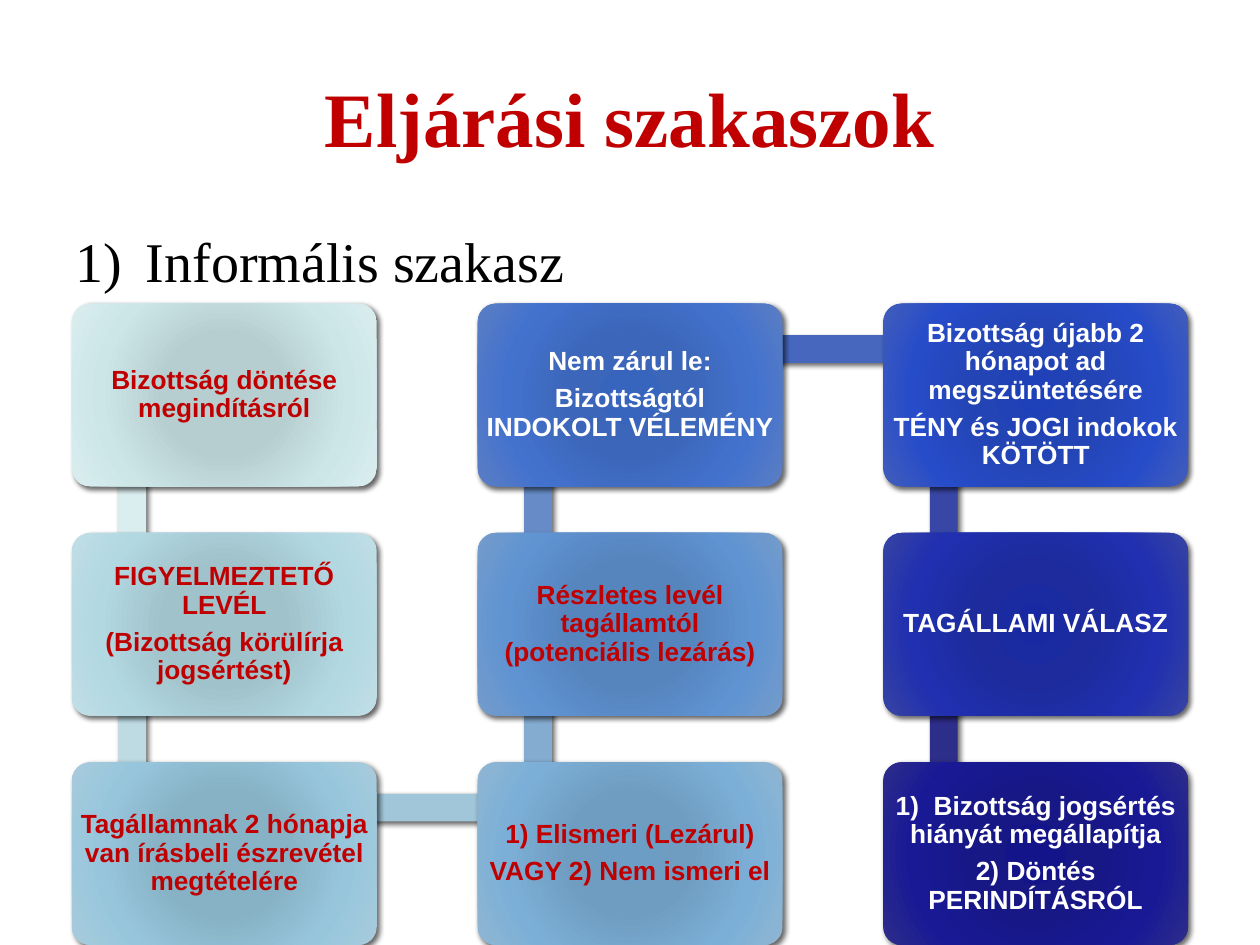
"""Build the slide on the procedural stages, with a snaking chain of nine boxes."""
from lxml import etree
from pptx import Presentation
from pptx import util as u
from pptx.dml.color import RGBColor
from pptx.enum import shapes, text
from pptx.oxml import parse_xml
from pptx.oxml.ns import nsdecls, qn

COLORS = {"red": "C00000", "white": "FFFFFF", "black": "000000"}
BOX_WIDTH, BOX_HEIGHT = 2.42, 1.45
LEFT, TOP, COLUMN_STEP, ROW_STEP = 0.57, 2.41, 3.22, 1.82
BAR = 0.22
STOPS = (0, 34, 70, 100)

STAGES = [
    (0, 0, "red", ["Bizottság döntése megindításról"],
     "B6CFD1 B7CED0 CCE6E8 DAEDEF", "DAEDEF"),
    (0, 1, "red", ["FIGYELMEZTETŐ LEVÉL", "(Bizottság körülírja jogsértést)"],
     "9EC2CC A0C2CA B2D8E2 C1DEE5", "BEDBE4"),
    (0, 2, "red", ["Tagállamnak 2 hónapja van írásbeli észrevétel megtételére"],
     "85B2C7 87B1C5 97C6DC A8CBDC", "A1C6D9"),
    (1, 2, "red", ["1) Elismeri (Lezárul)", "VAGY 2) Nem ismeri el"],
     "6C9DC4 6F9DC1 7CAFD7 8FB6D3", "84ABD0"),
    (1, 1, "red", ["Részletes levél tagállamtól (potenciális lezárás)"],
     "5284C0 5684BD 5F93D2 759CCB", "668BC6"),
    (1, 0, "white", ["Nem zárul le:", "Bizottságtól INDOKOLT VÉLEMÉNY"],
     "3765BD 3C66B9 4372CE 5B7EC3", "4766BE"),
    (2, 0, "white", ["Bizottság újabb 2 hónapot ad megszüntetésére",
                     "TÉNY és JOGI indokok KÖTÖTT"],
     "1E41B9 2344B4 274CC9 415DBA", "3847A6"),
    (2, 1, "white", ["TAGÁLLAMI VÁLASZ"],
     "1828A2 1D2B9D 2030B0 3743A2", "2D2D8A"),
    (2, 2, "white", ["1)  Bizottság jogsértés hiányát megállapítja",
                     "2) Döntés PERINDÍTÁSRÓL"],
     "13138A 171786 191996 2D2D8A", None),
]


def set_font(para, name, size, color, bold=False):
    """Format the whole paragraph."""
    para.font.name = name
    para.font.size = u.Pt(size)
    para.font.bold = bold
    para.font.color.rgb = RGBColor.from_string(COLORS[color])


def add_block(kind, left, top, width, height):
    """Add a shape without outline and with a soft drop shadow."""
    block = page.shapes.add_shape(kind, *map(u.Inches, (left, top, width, height)))
    block.line.fill.background()
    block.shadow.inherit = False
    block._element.spPr.find(qn("a:effectLst")).append(parse_xml(
        f'<a:outerShdw {nsdecls("a")} blurRad="38100" dist="25400" dir="2700000" '
        'rotWithShape="0"><a:srgbClr val="000000"><a:alpha val="60000"/>'
        '</a:srgbClr></a:outerShdw>'))
    return block


deck = Presentation()
deck.slide_width, deck.slide_height = u.Inches(10), u.Inches(7.5)
page = deck.slides.add_slide(deck.slide_layouts[5])

title = page.shapes.title
title.left, title.top = u.Inches(0.5), u.Inches(0.3)
title.width, title.height = u.Inches(9), u.Inches(1.25)
title.text_frame.text = "Eljárási szakaszok"
title.text_frame.vertical_anchor = text.MSO_ANCHOR.MIDDLE
para = title.text_frame.paragraphs[0]
para.alignment = text.PP_ALIGN.CENTER
set_font(para, "Times New Roman", 44, "red", True)

heading = page.shapes.add_textbox(*map(u.Inches, (0.5, 1.75, 9, 0.65)))
heading.text_frame.word_wrap = True
para = heading.text_frame.paragraphs[0]
para.text = "Informális szakasz"
properties = para._p.get_or_add_pPr()
properties.set("marL", str(u.Inches(0.56)))
properties.set("indent", str(-u.Inches(0.56)))
etree.SubElement(properties, qn("a:buFont"), typeface="+mj-lt")
etree.SubElement(properties, qn("a:buAutoNum"), type="arabicParenR")
set_font(para, "Times New Roman", 32, "black")

for index, (column, row, font_color, lines, gradient, bar_color) in enumerate(STAGES):
    left = LEFT + column * COLUMN_STEP
    top = TOP + row * ROW_STEP
    if bar_color:
        next_column, next_row = STAGES[index + 1][:2]
        if next_column == column:
            upper = TOP + min(row, next_row) * ROW_STEP
            place = (left + 0.37, upper + 0.37, BAR, ROW_STEP)
        else:
            place = (left + 0.49, top + 0.25, COLUMN_STEP, BAR)
        bar = add_block(shapes.MSO_SHAPE.RECTANGLE, *place)
        bar.fill.solid()
        bar.fill.fore_color.rgb = RGBColor.from_string(bar_color)

    box = add_block(shapes.MSO_SHAPE.ROUNDED_RECTANGLE, left, top, BOX_WIDTH, BOX_HEIGHT)
    box.adjustments[0] = 0.1
    stops = "".join(
        f'<a:gs pos="{stop * 1000}"><a:srgbClr val="{color}"/></a:gs>'
        for stop, color in zip(STOPS, gradient.split()))
    box._element.spPr.find(qn("a:ln")).addprevious(parse_xml(
        f'<a:gradFill {nsdecls("a")} rotWithShape="1"><a:gsLst>{stops}</a:gsLst>'
        '<a:path path="circle"><a:fillToRect l="100000" t="100000" r="100000" '
        'b="100000"/></a:path></a:gradFill>'))

    frame = box.text_frame
    frame.word_wrap = True
    frame.vertical_anchor = text.MSO_ANCHOR.MIDDLE
    frame.margin_left = frame.margin_right = u.Inches(0.02)
    frame.margin_top = frame.margin_bottom = u.Inches(0.02)
    frame.text = "\n".join(lines)
    for para in frame.paragraphs:
        para.alignment = text.PP_ALIGN.CENTER
        para.line_spacing = 0.9
        para.space_after = u.Pt(5)
        set_font(para, "Arial", 15, font_color, True)

deck.save("out.pptx")
